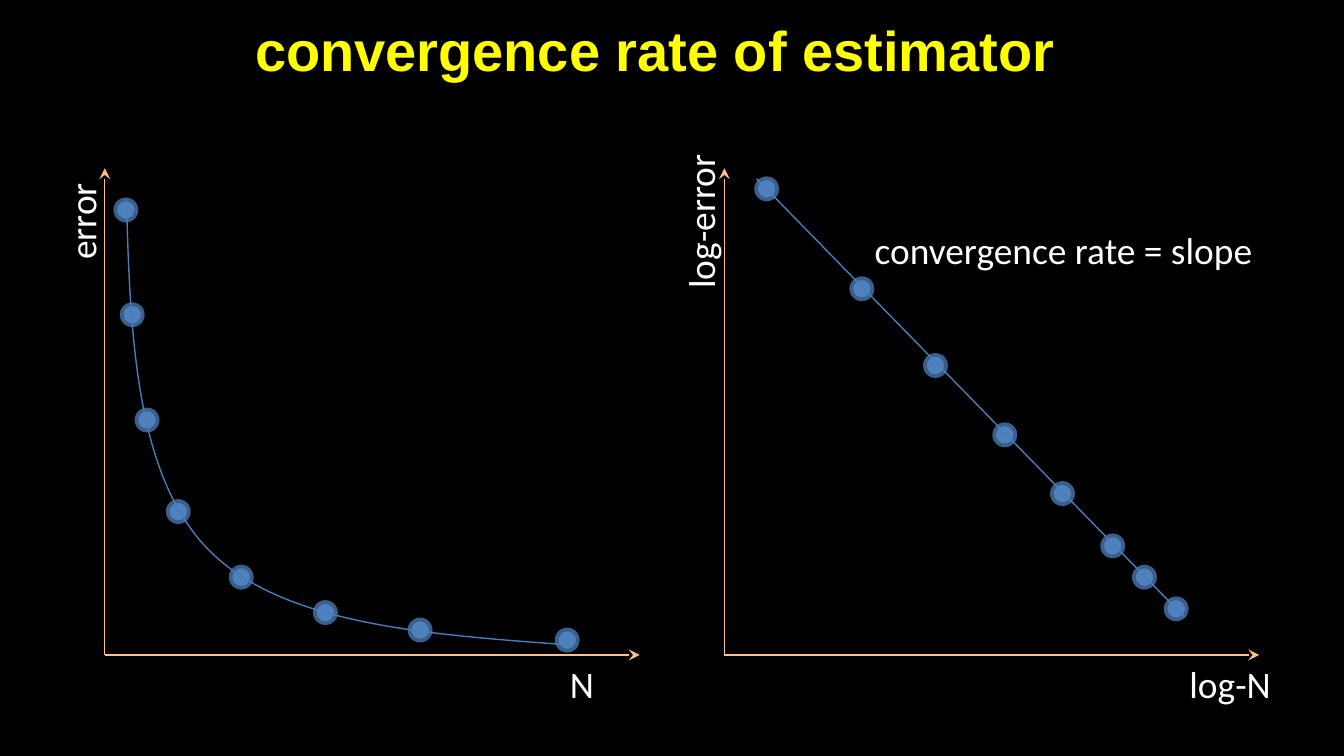
from dataclasses import dataclass

from lxml import etree
from pptx import Presentation
from pptx.dml.color import RGBColor
from pptx.enum import shapes, text
from pptx.oxml.ns import qn
from pptx.util import Cm, Pt

Point = tuple[float, float]  # centimetres


@dataclass(frozen=True)
class Theme:
    background: str = "000000"
    title: str = "FFFF00"
    body: str = "FFFFFF"
    axis: str = "FAC090"
    dot: str = "4F81BD"
    dot_edge: str = "3A5F8C"
    curve: str = "4B7EBC"
    title_size: float = 30
    body_size: float = 20
    thin: float = 0.75
    thick: float = 2


@dataclass(frozen=True)
class Label:
    text: str
    left: float
    top: float
    width: float


@dataclass(frozen=True)
class Plot:
    origin_x: float
    x_label: Label
    y_label: Label
    dots: list[Point]


THEME = Theme()
AXIS_TOP, AXIS_BASE, AXIS_LENGTH = 3.18, 12.38, 10.11
DOT_SIZE = 0.4
LABEL_HEIGHT = 1.12

ERROR_PLOT = Plot(
    1.98, Label("N", 10.52, 12.37, 0.97), Label("error", 0.56, 3.61, 1.98),
    [(2.38, 3.97), (2.5, 5.95), (2.78, 7.94), (3.37, 9.67),
     (4.56, 10.91), (6.15, 11.58), (7.94, 11.91), (10.72, 12.1)])
LOG_PLOT = Plot(
    13.69, Label("log-N", 22.23, 12.37, 2.06), Label("log-error", 11.71, 3.61, 3.07),
    [(14.49, 3.57), (16.29, 5.46), (17.68, 6.91), (18.99, 8.22),
     (20.08, 9.33), (21.03, 10.32), (21.63, 10.91), (22.23, 11.51)])
# Start point, then two control points and an end point for each segment
DECAY = [(2.39, 3.76), (2.46, 6.38), (2.57, 8.99), (3.94, 10.39),
         (5.33, 11.81), (8.05, 11.99), (10.74, 12.19)]
LOG_LINE = [(22.38, 11.66), (14.3, 3.38)]


def rgb(value: str) -> RGBColor:
    return RGBColor.from_string(value)


def set_line(sp, color: str, width: float) -> None:
    sp.line.color.rgb = rgb(color)
    sp.line.width = Pt(width)


def add_text(slide, label: Label, *, height: float = LABEL_HEIGHT, font: str = "Calibri",
             size: float = THEME.body_size, color: str = THEME.body, bold: bool = False,
             rotation: float = 0, wrap: bool = False,
             align=text.PP_ALIGN.LEFT, anchor=text.MSO_ANCHOR.TOP) -> None:
    sp = slide.shapes.add_textbox(Cm(label.left), Cm(label.top), Cm(label.width), Cm(height))
    sp.rotation = rotation
    tf = sp.text_frame
    tf.word_wrap = wrap
    tf.vertical_anchor = anchor
    p = tf.paragraphs[0]
    p.alignment = align
    r = p.add_run()
    r.text = label.text
    r.font.name, r.font.size, r.font.bold = font, Pt(size), bold
    r.font.color.rgb = rgb(color)


def add_line(slide, start: Point, end: Point, color: str, arrow: bool = False) -> None:
    sp = slide.shapes.add_connector(shapes.MSO_CONNECTOR.STRAIGHT,
                                    *(Cm(v) for v in (*start, *end)))
    set_line(sp, color, THEME.thin)
    if arrow:
        etree.SubElement(sp.line._get_or_add_ln(), qn("a:tailEnd"), type="stealth")
    etree.SubElement(sp._element.spPr, qn("a:effectLst"))


def add_dot(slide, center: Point) -> None:
    x, y = (Cm(v - DOT_SIZE / 2) for v in center)
    sp = slide.shapes.add_shape(shapes.MSO_SHAPE.OVAL, x, y, Cm(DOT_SIZE), Cm(DOT_SIZE))
    sp.shadow.inherit = False
    sp.fill.solid()
    sp.fill.fore_color.rgb = rgb(THEME.dot)
    set_line(sp, THEME.dot_edge, THEME.thick)


def add_bezier(slide, points: list[Point], color: str) -> None:
    """Draw an outline through the points, then merge each three lines into a cubic."""
    start, *rest = [(Cm(x), Cm(y)) for x, y in points]
    builder = slide.shapes.build_freeform(*start)
    builder.add_line_segments(rest, close=False)
    sp = builder.convert_to_shape()
    sp.shadow.inherit = False
    sp.fill.background()
    set_line(sp, color, THEME.thin)
    lines = list(sp._element.iter(qn("a:lnTo")))
    outline = lines[0].getparent()
    for i in range(0, len(lines), 3):
        cubic = etree.SubElement(outline, qn("a:cubicBezTo"))
        for line in lines[i:i + 3]:
            cubic.append(line[0])
            outline.remove(line)


def add_plot(slide, plot: Plot) -> None:
    origin = (plot.origin_x, AXIS_BASE)
    for end in ((plot.origin_x, AXIS_TOP), (plot.origin_x + AXIS_LENGTH, AXIS_BASE)):
        add_line(slide, origin, end, THEME.axis, arrow=True)
    add_text(slide, plot.x_label)
    add_text(slide, plot.y_label, rotation=270)
    for center in plot.dots:
        add_dot(slide, center)


def main() -> None:
    prs = Presentation()
    prs.slide_width, prs.slide_height = Cm(25.4), Cm(14.29)
    slide = prs.slides.add_slide(prs.slide_layouts[6])
    slide.background.fill.solid()
    slide.background.fill.fore_color.rgb = rgb(THEME.background)

    add_text(slide, Label("convergence rate of estimator", 3.53, 0.2, 17.7), height=1.45,
             font="Arial", size=THEME.title_size, color=THEME.title, bold=True, wrap=True,
             align=text.PP_ALIGN.CENTER, anchor=text.MSO_ANCHOR.MIDDLE)
    add_plot(slide, ERROR_PLOT)
    add_bezier(slide, DECAY, THEME.curve)
    add_plot(slide, LOG_PLOT)
    add_line(slide, *LOG_LINE, THEME.curve)
    add_text(slide, Label("convergence rate = slope", 16.28, 4.17, 8))
    prs.save("out.pptx")


if __name__ == "__main__":
    main()
